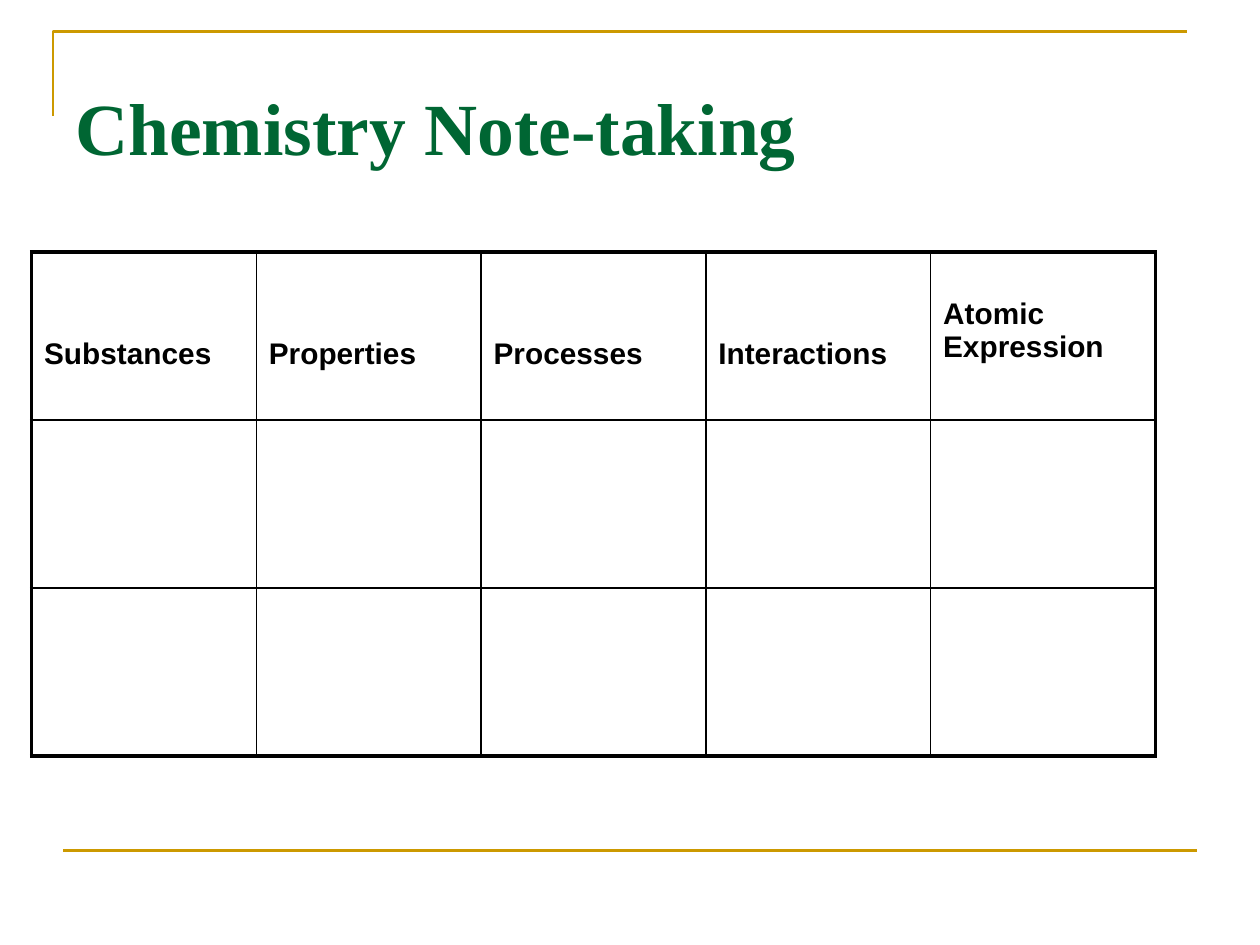
from lxml.etree import SubElement
from pptx import Presentation
from pptx.dml.color import RGBColor
from pptx.enum.shapes import MSO_CONNECTOR
from pptx.oxml import parse_xml
from pptx.oxml.ns import nsdecls, qn
from pptx.util import Inches, Pt

COLORS = {"rule": "CC9900", "title": "006633", "ink": "000000"}
HEADINGS = ["Substances", "Properties", "Processes", "Interactions", "Atomic Expression"]
ROWS = 3
OUTER, INNER = 2.25, 1


def set_font(font, name, size, color):
    font.name = name
    font.size = Pt(size)
    font.bold = True
    font.color.rgb = RGBColor.from_string(COLORS[color])


def set_rule_line(line):
    line.color.rgb = RGBColor.from_string(COLORS["rule"])
    line.width = Pt(1.5)


def add_frame(page, left, top, width, height):
    outline = page.shapes.build_freeform(Inches(left), Inches(top + height))
    outline.add_line_segments(
        [(Inches(left), Inches(top)), (Inches(left + width), Inches(top))], close=False
    )
    corner = outline.convert_to_shape()
    corner.shadow.inherit = False
    corner.fill.background()
    set_rule_line(corner.line)


def add_footer_rule(page, left, top, width):
    rule = page.shapes.add_connector(
        MSO_CONNECTOR.STRAIGHT, Inches(left), Inches(top), Inches(left + width), Inches(top)
    )
    set_rule_line(rule.line)
    SubElement(rule._element.spPr, qn("a:effectLst"))


def add_title(page, left, top, width, height):
    box = page.shapes.add_textbox(Inches(left), Inches(top), Inches(width), Inches(height))
    box.text_frame.word_wrap = True
    para = box.text_frame.paragraphs[0]
    para.text = "Chemistry Note-taking"
    set_font(para.font, "Times New Roman", 42, "title")


def set_borders(cell, widths):
    properties = cell._tc.get_or_add_tcPr()
    for index, (side, width) in enumerate(widths.items()):
        border = parse_xml(
            f'<a:ln{side} {nsdecls("a")} w="{Pt(width)}"><a:solidFill>'
            f'<a:srgbClr val="{COLORS["ink"]}"/></a:solidFill></a:ln{side}>'
        )
        properties.insert(index, border)


def add_notes_table(page, left, top, width, height):
    columns = len(HEADINGS)
    table = page.shapes.add_table(
        ROWS, columns, Inches(left), Inches(top), Inches(width), Inches(height)
    ).table
    for row in range(ROWS):
        for column in range(columns):
            cell = table.cell(row, column)
            cell.fill.background()
            set_borders(cell, {
                "L": OUTER if column == 0 else INNER,
                "R": OUTER if column == columns - 1 else INNER,
                "T": OUTER if row == 0 else INNER,
                "B": OUTER if row == ROWS - 1 else INNER,
            })
    for column, heading in enumerate(HEADINGS):
        cell = table.cell(0, column)
        cell.margin_top = Inches(0.36 if " " in heading else 0.68)
        para = cell.text_frame.paragraphs[0]
        para.text = heading
        set_font(para.font, "Arial", 17, "ink")


def main():
    deck = Presentation()
    deck.slide_width, deck.slide_height = Inches(10), Inches(7.5)
    page = deck.slides.add_slide(deck.slide_layouts[6])
    add_frame(page, 0.42, 0.25, 9, 0.67)
    add_footer_rule(page, 0.5, 6.75, 9)
    add_title(page, 0.5, 0.6, 8, 0.8)
    add_notes_table(page, 0.25, 2, 8.92, 4)
    deck.save("out.pptx")


if __name__ == "__main__":
    main()
